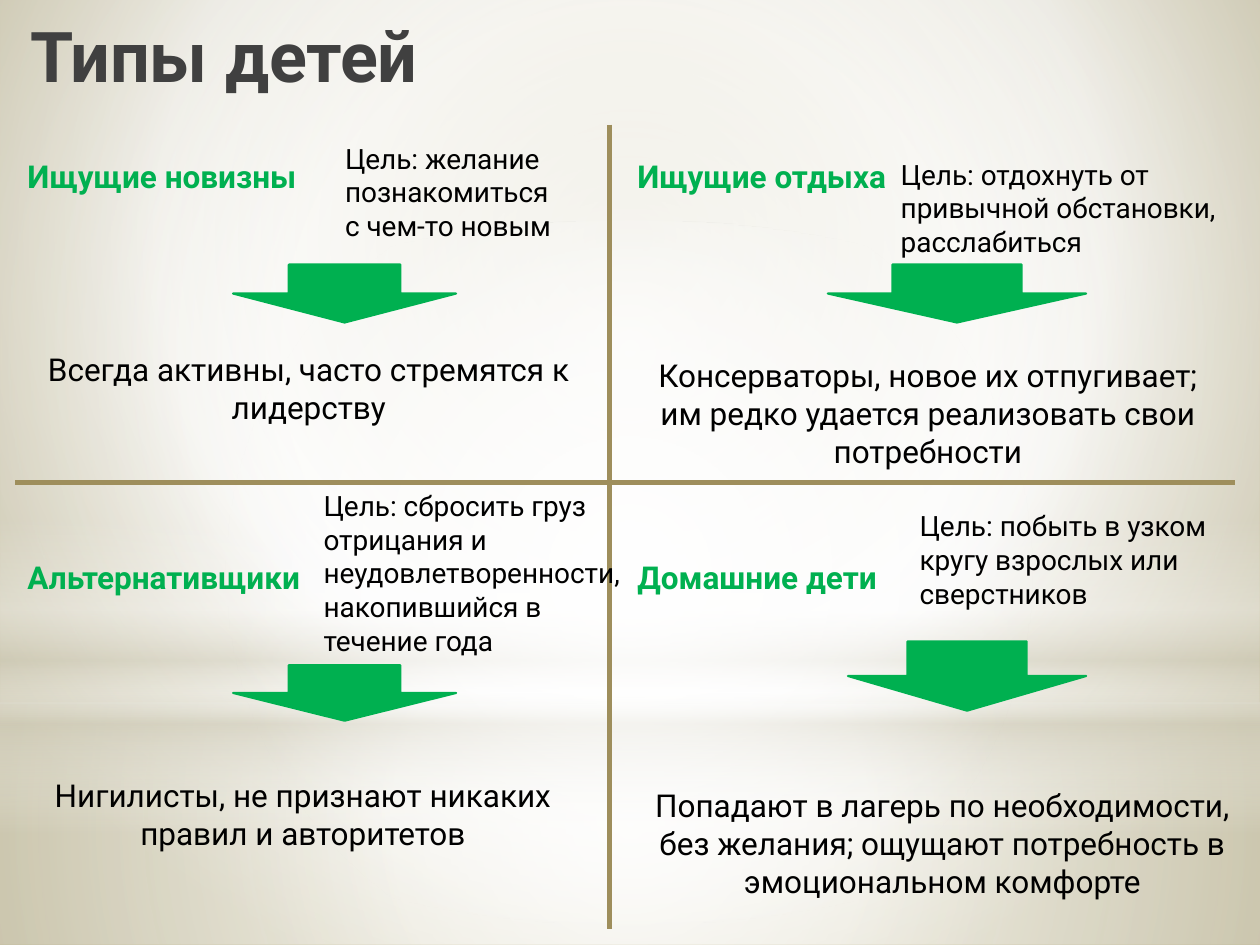
from lxml import etree
from pptx import Presentation
from pptx.dml.color import RGBColor
from pptx.enum.shapes import MSO_CONNECTOR, MSO_SHAPE
from pptx.enum.text import MSO_ANCHOR, PP_ALIGN
from pptx.oxml.ns import qn
from pptx.util import Inches, Pt

RECTANGLE, OVAL, DOWN_ARROW = MSO_SHAPE.RECTANGLE, MSO_SHAPE.OVAL, MSO_SHAPE.DOWN_ARROW
STRAIGHT = MSO_CONNECTOR.STRAIGHT
LEFT, CENTER = PP_ALIGN.LEFT, PP_ALIGN.CENTER
TOP = MSO_ANCHOR.TOP

FONT = "Roboto"
GREEN, GOLD, BLACK, DARK_GREY = "00B050", "9E8E5C", "000000", "404040"
WHITE, SAND = "FFFFFF", "D0CCB9"
MIDDLE = (50, 50, 50, 50)

# Each type of child: (text, box) for name, goal and traits, and the arrow box
CHILD_TYPES = [
    (("Ищущие новизны", (0.12, 1.2, 2.44, 0.4)),
     ("Цель: желание познакомиться с чем-то новым", (2.64, 1.07, 1.97, 0.91)),
     (1.85, 2.1, 1.77, 0.46),
     ("Всегда активны, часто стремятся к лидерству", (0.09, 2.73, 4.72, 0.71))),
    (("Ищущие отдыха", (4.96, 1.2, 2.24, 0.4)),
     ("Цель: отдохнуть от привычной обстановки, расслабиться", (7.05, 1.2, 2.95, 0.91)),
     (6.57, 2.1, 2.05, 0.46),
     ("Консерваторы, новое их отпугивает; им редко удается реализовать свои потребности",
      (5.08, 2.78, 4.57, 1.01))),
    (("Альтернативщики", (0.12, 4.38, 2.44, 0.4)),
     ("Цель: сбросить груз отрицания и неудовлетворенности, накопившийся в течение года",
      (2.47, 3.83, 2.76, 1.45)),
     (1.85, 5.28, 1.77, 0.44),
     ("Нигилисты, не признают никаких правил и авторитетов", (0.12, 6.11, 4.57, 0.71))),
    (("Домашние дети", (4.96, 4.38, 2.24, 0.4)),
     ("Цель: побыть в узком кругу взрослых или сверстников", (7.2, 3.99, 2.52, 0.91)),
     (6.73, 5.09, 1.89, 0.55),
     ("Попадают в лагерь по необходимости, без желания; ощущают потребность в "
      "эмоциональном комфорте", (5.08, 6.19, 4.8, 1.01))),
]

# Soft light over the background: shape, box, (position, colour, opacity), centre
LIGHTS = [
    (RECTANGLE, (0, 5.58, 10, 1.92), [(0, WHITE, 91), (37, WHITE, 76), (100, SAND, 79)], MIDDLE),
    (RECTANGLE, (0, 0, 10, 5.58), [(0, WHITE, 89), (48, WHITE, 62), (100, SAND, 79)], MIDDLE),
    (RECTANGLE, (0, 4.12, 10, 2.5), [(0, WHITE, 0), (29, WHITE, 30), (45, SAND, 40),
                                     (55, WHITE, 26), (65, SAND, 60), (100, WHITE, 0)], None),
    (OVAL, (0, 1.75, 10, 5.58), [(0, WHITE, 100), (56, WHITE, 0)], MIDDLE),
]


def rgb(color):
    return RGBColor.from_string(color)


def inches(box):
    return [Inches(length) for length in box]


def set_gradient(fill, element, stops, center):
    """Circular gradient around center, or top to bottom when center is None."""
    fill.gradient()
    gradient = next(element.iter(qn("a:gradFill")))
    for child in list(gradient):
        gradient.remove(child)
    stop_list = etree.SubElement(gradient, qn("a:gsLst"))
    for position, color, opacity in stops:
        stop = etree.SubElement(stop_list, qn("a:gs"), pos=str(position * 1000))
        tint = etree.SubElement(stop, qn("a:srgbClr"), val=color)
        if opacity < 100:
            etree.SubElement(tint, qn("a:alpha"), val=str(opacity * 1000))
    if center is None:
        etree.SubElement(gradient, qn("a:lin"), ang="5400000", scaled="0")
    else:
        circle = etree.SubElement(gradient, qn("a:path"), path="circle")
        sides = {side: str(inset * 1000) for side, inset in zip("ltrb", center)}
        etree.SubElement(circle, qn("a:fillToRect"), **sides)


def add_light(slide, kind, box, stops, center):
    light = slide.shapes.add_shape(kind, *inches(box))
    light.shadow.inherit = False
    light.line.fill.background()
    set_gradient(light.fill, light._element, stops, center)


def write(frame, text, size, color, bold=False, align=LEFT):
    frame.text = text
    frame.word_wrap = True
    frame.vertical_anchor = TOP
    paragraph = frame.paragraphs[0]
    paragraph.alignment = align
    font = paragraph.runs[0].font
    font.name, font.size, font.bold = FONT, Pt(size), bold
    font.color.rgb = rgb(color)


def add_text(slide, content, size, color=BLACK, bold=False, align=LEFT):
    text, box = content
    write(slide.shapes.add_textbox(*inches(box)).text_frame, text, size, color, bold, align)


def add_arrow(slide, box):
    arrow = slide.shapes.add_shape(DOWN_ARROW, *inches(box))
    arrow.shadow.inherit = False
    arrow.fill.solid()
    arrow.fill.fore_color.rgb = rgb(GREEN)
    arrow.line.color.rgb = rgb(GREEN)
    arrow.line.width = Pt(1.25)


def add_divider(slide, ends):
    divider = slide.shapes.add_connector(STRAIGHT, *inches(ends))
    divider.line.color.rgb = rgb(GOLD)
    divider.line.width = Pt(3)
    etree.SubElement(divider._element.spPr, qn("a:effectLst"))


def main():
    prs = Presentation()
    prs.slide_width, prs.slide_height = Inches(10), Inches(7.5)
    slide = prs.slides.add_slide(prs.slide_layouts[5])

    # Background
    set_gradient(slide.background.fill, slide.element,
                 [(0, "CEC8AC", 100), (60, WHITE, 100), (100, "B9B085", 100)],
                 (20, 10, 20, 60))
    for light in LIGHTS:
        add_light(slide, *light)

    # Title, brought in front of the lights
    title = slide.shapes.title
    title.left, title.top, title.width, title.height = inches((0.14, 0.05, 7.12, 0.71))
    write(title.text_frame, "Типы детей", 40, DARK_GREY, bold=True)
    slide.shapes._spTree.append(title._element)

    # Cross that parts the four types
    add_divider(slide, (4.84, 0.99, 4.84, 7.37))
    add_divider(slide, (0.12, 3.83, 9.8, 3.83))

    # The four types
    for name, goal, arrow, traits in CHILD_TYPES:
        add_text(slide, name, 18, GREEN, bold=True)
        add_text(slide, goal, 16)
        add_arrow(slide, arrow)
        add_text(slide, traits, 18, align=CENTER)

    prs.save("out.pptx")


if __name__ == "__main__":
    main()
